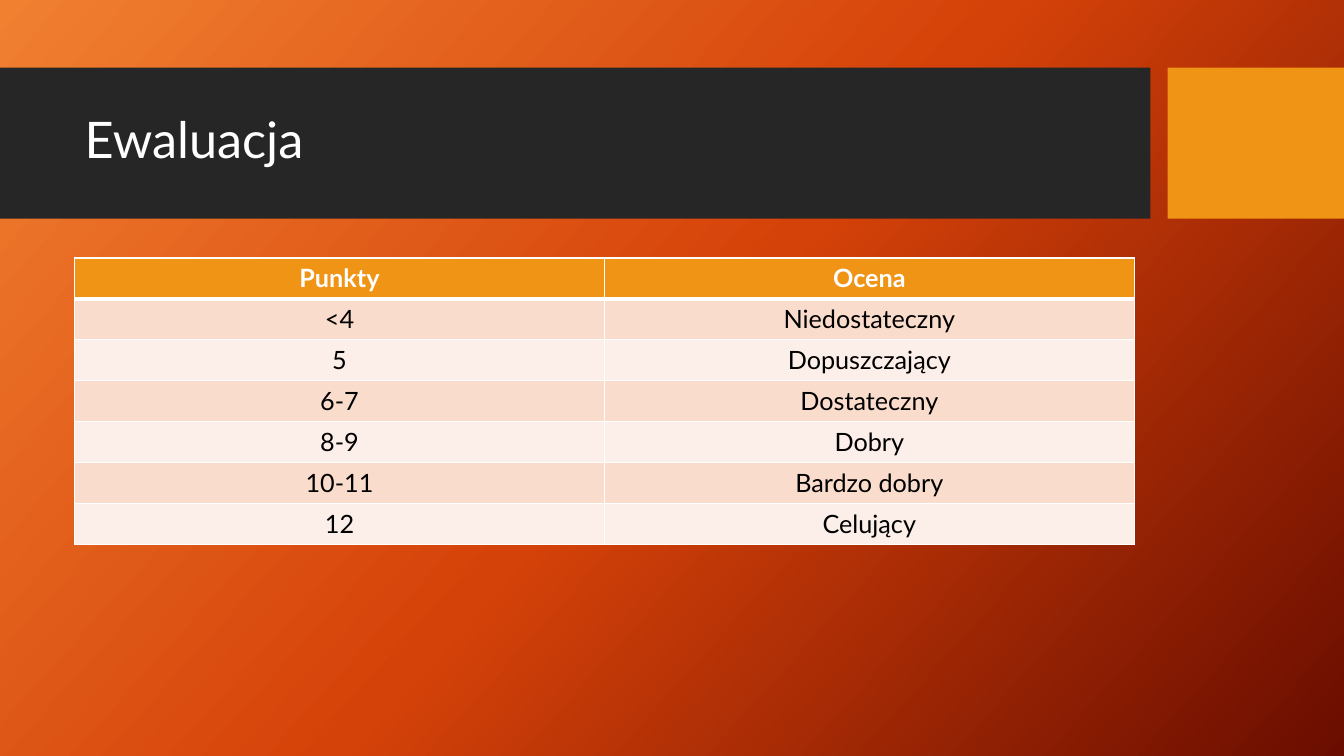
from copy import deepcopy

from lxml.etree import SubElement
from pptx import Presentation
from pptx.dml.color import RGBColor
from pptx.enum.shapes import MSO_SHAPE
from pptx.enum.text import MSO_ANCHOR, PP_ALIGN
from pptx.oxml.ns import qn
from pptx.util import Inches, Pt

FONT = "Lato"
WHITE, BLACK, DARK, ORANGE = "FFFFFF", "000000", "262626", "F09415"
BANDS = ["F9DCCC", "FCEEE8"]
GRADIENT = [(0, "F18031"), (0.5, "D54209"), (1, "6A0D00")]
GRADES = [
    ("Punkty", "Ocena"),
    ("<4", "Niedostateczny"),
    ("5", "Dopuszczający"),
    ("6-7", "Dostateczny"),
    ("8-9", "Dobry"),
    ("10-11", "Bardzo dobry"),
    ("12", "Celujący"),
]


def color(value):
    """Turn a hex string into a colour."""
    return RGBColor.from_string(value)


def set_font(font, rgb, **values):
    """Apply format values and a colour to a font."""
    for name, value in {"name": FONT, **values}.items():
        setattr(font, name, value)
    font.color.rgb = color(rgb)


def add_background(s):
    """Fill the slide background with the diagonal gradient."""
    fill = s.background.fill
    fill.gradient()
    fill.gradient_angle = 360 - 42
    stop_list = next(s.element.iter(qn("a:gsLst")))
    stop_list.append(deepcopy(stop_list[0]))
    for stop, (position, rgb) in zip(fill.gradient_stops, GRADIENT):
        stop.position = position
        stop.color.rgb = color(rgb)


def add_block(s, left, top, width, height, rgb):
    """Add a plain filled rectangle."""
    sp = s.shapes.add_shape(MSO_SHAPE.RECTANGLE, Inches(left), Inches(top),
                            Inches(width), Inches(height))
    sp.shadow.inherit = False
    sp.fill.solid()
    sp.fill.fore_color.rgb = color(rgb)
    sp.line.fill.background()


def add_title_band(s, top, width, height, title):
    """Add the dark band, the orange block at its right and the title."""
    block_width, gap = 1.75, 0.17
    band_width = width - block_width - gap
    add_block(s, 0, top, band_width, height, DARK)
    add_block(s, width - block_width, top, block_width, height, ORANGE)
    box = s.shapes.add_textbox(Inches(0.74), Inches(top + 0.15),
                               Inches(10.51), Inches(1.18))
    tf = box.text_frame
    tf.word_wrap = True
    tf.vertical_anchor = MSO_ANCHOR.MIDDLE
    p = tf.paragraphs[0]
    p.line_spacing = 0.9
    r = p.add_run()
    r.text = title
    set_font(r.font, WHITE, size=Pt(36))


def set_borders(cell, widths):
    """Draw white borders, with widths in points by side."""
    tc_pr = cell._tc.get_or_add_tcPr()
    for index, side in enumerate("LRTB"):
        ln = SubElement(tc_pr, qn(f"a:ln{side}"), w=str(Pt(widths[side])))
        SubElement(SubElement(ln, qn("a:solidFill")), qn("a:srgbClr"), val=WHITE)
        tc_pr.insert(index, ln)


def add_grade_table(s, left, top, width, height, rows):
    """Add the table of points and grades with banded rows."""
    table = s.shapes.add_table(len(rows), len(rows[0]), Inches(left), Inches(top),
                               Inches(width), Inches(height)).table
    for i, row in enumerate(rows):
        header = i == 0
        for j, text in enumerate(row):
            cell = table.cell(i, j)
            cell.fill.solid()
            cell.fill.fore_color.rgb = color(ORANGE if header else BANDS[(i - 1) % 2])
            set_borders(cell, {"L": 1, "R": 1, "T": 3 if i == 1 else 1,
                               "B": 3 if header else 1})
            p = cell.text_frame.paragraphs[0]
            p.alignment = PP_ALIGN.CENTER
            r = p.add_run()
            r.text = text
            set_font(r.font, WHITE if header else BLACK, size=Pt(18), bold=header)


def main():
    """Build the evaluation slide and save it."""
    prs = Presentation()
    prs.slide_width, prs.slide_height = Inches(13.33), Inches(7.5)
    s = prs.slides.add_slide(prs.slide_layouts[6])
    add_background(s)
    add_title_band(s, 0.67, 13.33, 1.5, "Ewaluacja")
    add_grade_table(s, 0.74, 2.56, 10.51, 2.84, GRADES)
    prs.save("out.pptx")


if __name__ == "__main__":
    main()
